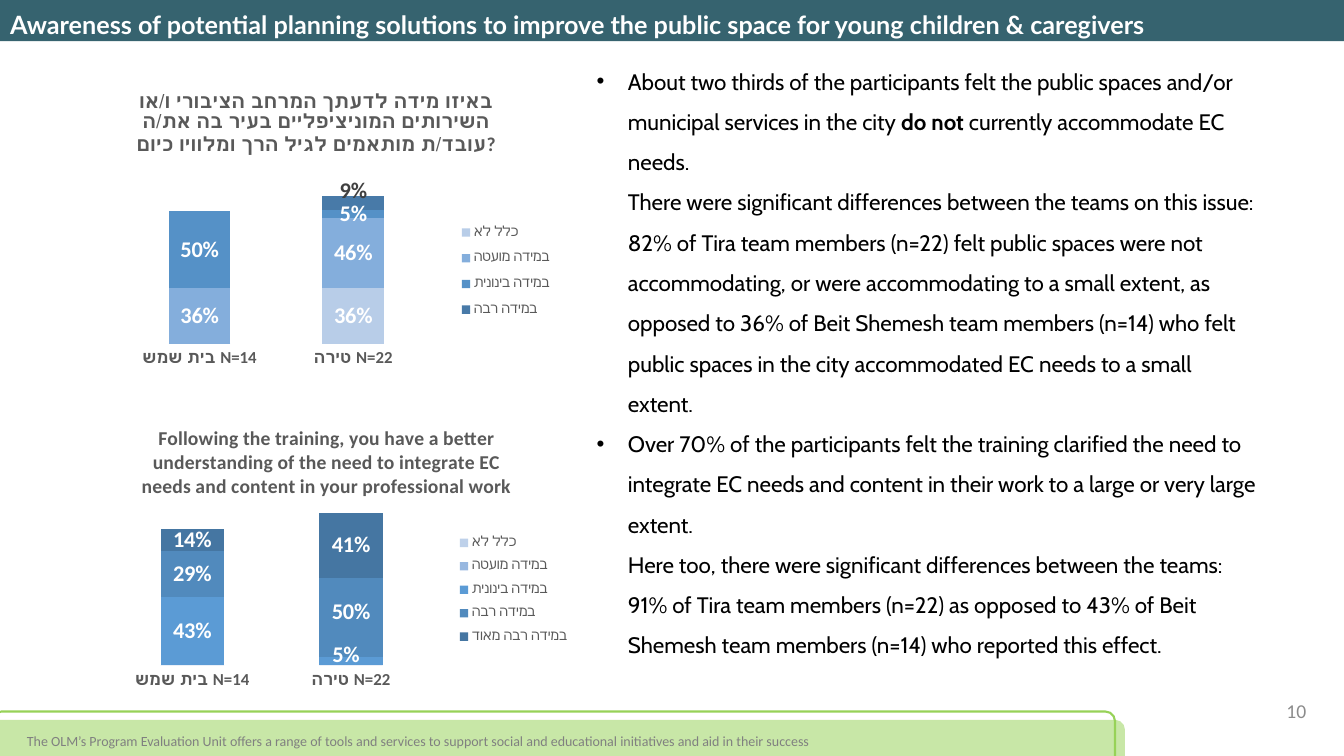
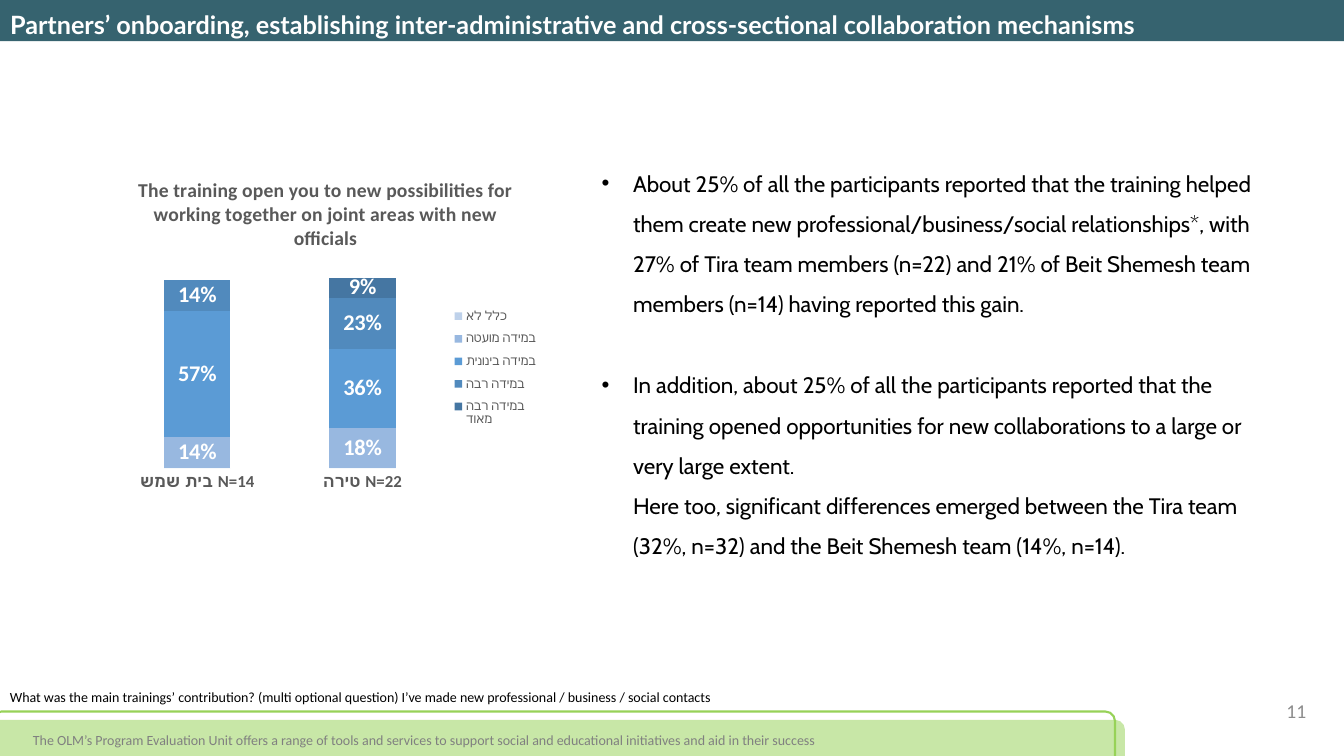
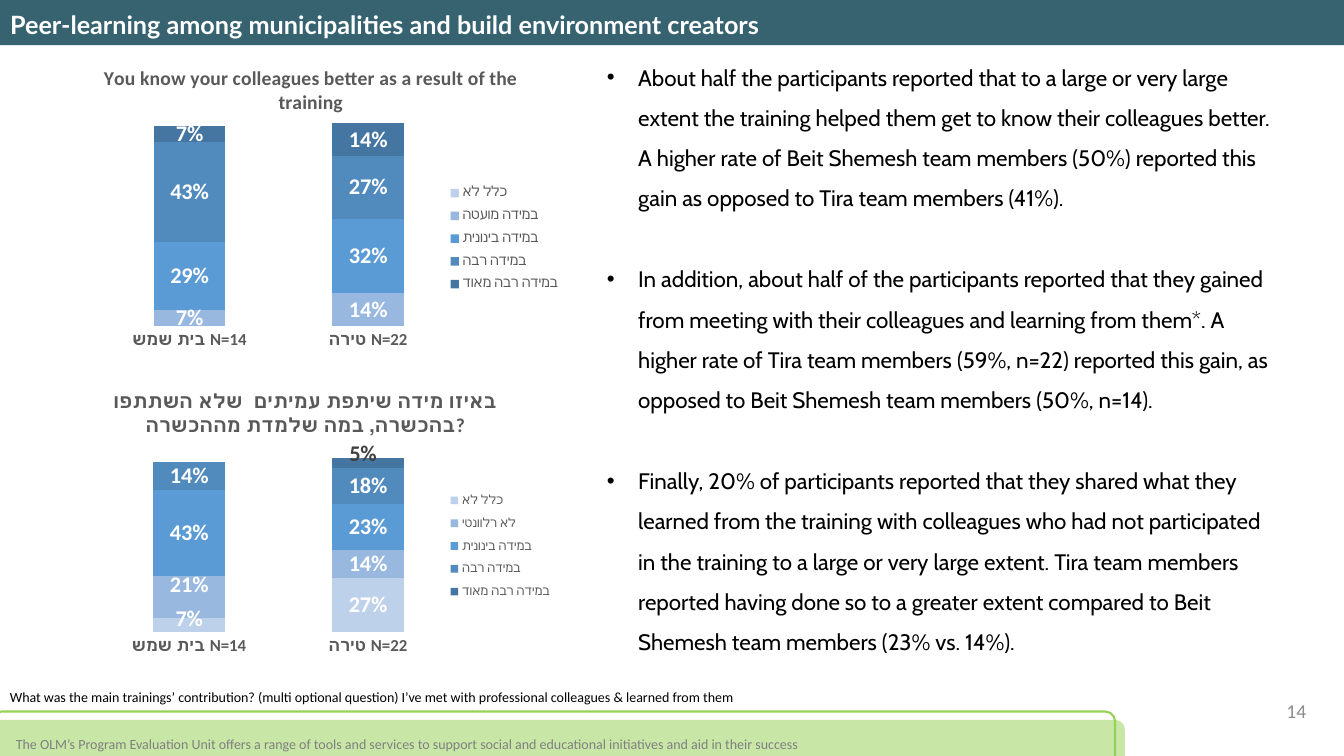
from lxml.etree import SubElement
from pptx import Presentation
from pptx.chart.data import CategoryChartData
from pptx.dml.color import RGBColor
from pptx.enum.chart import XL_CHART_TYPE, XL_LEGEND_POSITION, XL_TICK_MARK
from pptx.enum.shapes import MSO_SHAPE
from pptx.enum.text import MSO_ANCHOR, MSO_AUTO_SIZE, PP_ALIGN
from pptx.oxml.ns import qn
from pptx.util import Cm, Pt

WHITE = RGBColor(0xFF, 0xFF, 0xFF)
BLACK = RGBColor(0, 0, 0)
TEAL = RGBColor(0x36, 0x63, 0x6F)
PALE_GREEN = RGBColor(0xC8, 0xE7, 0xA7)
GREEN = RGBColor(0x97, 0xD2, 0x58)
NUMBER_GREY = RGBColor(0x8C, 0x8C, 0x8C)
FOOTER_GREY = RGBColor(0x80, 0x80, 0x80)
CHART_GREY = RGBColor(0x59, 0x59, 0x59)
DARK_LABEL = RGBColor(0x40, 0x40, 0x40)
FIVE_BLUES = [RGBColor.from_string(code) for code in ("BED1EA", "98B8E0", "5B9BD5", "518ABD", "4576A2")]
FOUR_BLUES = [RGBColor.from_string(code) for code in ("B8CDE8", "84AEDC", "5591C7", "487AA8")]

SLIDE_WIDTH, SLIDE_HEIGHT = 33.87, 19.05
BODY_INDENT = Cm(0.79)
BLANK_LINE = 29
FOOTER = (
    "The OLM’s Program Evaluation Unit offers a range of tools and services to support "
    "social and educational initiatives and aid in their success"
)
FOOTNOTE = "What was the main trainings’ contribution? (multi optional question) "
CATEGORIES = ["טירה N=22", "בית שמש N=14"]
NOT_AT_ALL, SMALL, MEDIUM, LARGE, VERY_LARGE = (
    "כלל לא", "במידה מועטה", "במידה בינונית", "במידה רבה", "במידה רבה מאוד")

# Boxes are left, top, width, height in cm. Title, plot and legend places are
# fractions of the chart; "moved" maps (series, point) to a label offset.
SLIDES = [
    {
        "number": "10",
        "title": "Awareness of potential planning solutions to improve the public space for young children & caregivers",
        "title_height": 1.04,
        "footer_at": (0.43, 18.34),
        "body_box": (14.78, 1.24, 17.25, 17.7),
        "paragraph_gap": 0,
        "body": [
            "About two thirds of the participants felt the public spaces and/or municipal services in the city "
            "**do not** currently accommodate EC needs.\n"
            "There were significant differences between the teams on this issue: \n"
            "82% of Tira team members (n=22) felt public spaces were not accommodating, or were accommodating "
            "to a small extent, as opposed to 36% of Beit Shemesh team members (n=14) who felt public spaces "
            "in the city accommodated EC needs to a small extent.",
            "Over 70% of the participants felt the training clarified the need to integrate EC needs and content "
            "in their work to a large or very large extent.\n"
            "Here too, there were significant differences between the teams: 91% of Tira team members (n=22) "
            "as opposed to 43% of Beit Shemesh team members (n=14) who reported this effect.",
        ],
        "charts": [
            {
                "box": (1.83, 10.29, 12.7, 7.62),
                "title": "Following the training, you have a better understanding of the need to integrate "
                         "EC needs and content in your professional work",
                "title_at": (0.13, 0.04),
                "plot": (0.08, 0.22, 0.63, 0.63), "legend": (0.76, 0.39, 0.23, 0.42), "legend_size": 10,
                "maximum": 1.2, "colors": FIVE_BLUES,
                "series": [(NOT_AT_ALL, (0, 0)), (SMALL, (0, 0)), (MEDIUM, (0.05, 0.43)),
                           (LARGE, (0.5, 0.29)), (VERY_LARGE, (0.41, 0.14))],
                "moved": {(2, 0): (-0.01, -0.02), (3, 0): (0, -0.02)},
            },
            {
                "box": (1.57, 1.88, 12.7, 7.62),
                "title": "באיזו מידה לדעתך המרחב הציבורי ו/או השירותים המוניציפליים בעיר בה את/ה "
                         "עובד/ת מותאמים לגיל הרך ומלוויו כיום?",
                "title_at": (0.14, 0.04),
                "plot": (0.12, 0.28, 0.61, 0.61), "legend": (0.78, 0.46, 0.2, 0.38), "legend_size": 10,
                "maximum": 1.2, "colors": FOUR_BLUES, "last_label": DARK_LABEL,
                "series": [(NOT_AT_ALL, (0.36, 0)), (SMALL, (0.46, 0.36)),
                           (MEDIUM, (0.05, 0.5)), (LARGE, (0.09, 0))],
                "moved": {(3, 0): (0, -0.04)},
            },
        ],
    },
    {
        "number": "11",
        "title": "Partners’ onboarding, establishing inter-administrative and cross-sectional collaboration mechanisms",
        "title_height": 1.04,
        "footer_at": (0.58, 18.31),
        "body_box": (14.91, 3.81, 17.07, 12.57),
        "paragraph_gap": BLANK_LINE,
        "body": [
            "About 25% of all the participants reported that the training helped them create new "
            "professional/business/social relationships*, with 27% of Tira team members (n=22) and 21% of "
            "Beit Shemesh team members (n=14) having reported this gain.",
            "In addition, about 25% of all the participants reported that the training opened opportunities "
            "for new collaborations to a large or very large extent.\n"
            "Here too, significant differences emerged between the Tira team (32%, n=32) and the "
            "Beit Shemesh team (14%, n=14).",
        ],
        "charts": [
            {
                "box": (1.88, 3.63, 12.62, 10.34),
                "title": "The training open you to new possibilities for working together on joint areas "
                         "with new officials",
                "title_at": (0.12, 0.07),
                "plot": (0.08, 0.25, 0.66, 0.54), "legend": (0.75, 0.38, 0.18, 0.33), "legend_size": 9,
                "maximum": 1, "colors": FIVE_BLUES,
                "series": [(NOT_AT_ALL, (0, 0)), (SMALL, (0.18, 0.14)), (MEDIUM, (0.36, 0.57)),
                           (LARGE, (0.23, 0.14)), (VERY_LARGE, (0.09, 0))],
            },
        ],
        "footnote": FOOTNOTE + "I’ve made new professional / business / social contacts",
    },
    {
        "number": "14",
        "title": "Peer-learning among municipalities and build environment creators",
        "title_height": 1.14,
        "footer_at": (0.15, 18.42),
        "body_box": (15.04, 1.14, 17.25, 16.66),
        "paragraph_gap": BLANK_LINE,
        "body": [
            "About half the participants reported that to a large or very large extent the training helped them "
            "get to know their colleagues better. A higher rate of Beit Shemesh team members (50%) reported "
            "this gain as opposed to Tira team members (41%).",
            "In addition, about half of the participants reported that they gained from meeting with their "
            "colleagues and learning from them*. A higher rate of Tira team members (59%, n=22) reported this "
            "gain, as opposed to Beit Shemesh team members (50%, n=14).",
            "Finally, 20% of participants reported that they shared what they learned from the training with "
            "colleagues who had not participated in the training to a large or very large extent. Tira team "
            "members reported having done so to a greater extent compared to Beit Shemesh team members "
            "(23% vs. 14%).",
        ],
        "charts": [
            {
                "box": (0.46, 1.37, 14.76, 8.15),
                "title": "You know your colleagues better as a result of the training",
                "title_at": (0.14, 0.02),
                "plot": (0.14, 0.12, 0.61, 0.72), "legend": (0.73, 0.38, 0.2, 0.38), "legend_size": 10,
                "maximum": 1, "colors": FIVE_BLUES,
                "series": [(NOT_AT_ALL, (0, 0)), (SMALL, (0.14, 0.07)), (MEDIUM, (0.32, 0.29)),
                           (LARGE, (0.27, 0.43)), (VERY_LARGE, (0.14, 0.07))],
            },
            {
                "box": (1.37, 9.53, 12.7, 7.62),
                "title": "באיזו מידה שיתפת עמיתים  שלא השתתפו בהכשרה, במה שלמדת מההכשרה?",
                "title_at": (0.11, 0.03),
                "plot": (0.09, 0.18, 0.71, 0.66), "legend": (0.78, 0.35, 0.21, 0.41), "legend_size": 9,
                "maximum": 1, "colors": FIVE_BLUES, "last_label": DARK_LABEL,
                "series": [(NOT_AT_ALL, (0.27, 0.07)), ("לא רלוונטי", (0.14, 0.21)), (MEDIUM, (0.23, 0.43)),
                           (LARGE, (0.18, 0.14)), (VERY_LARGE, (0.05, 0))],
                "moved": {(4, 0): (-0.01, -0.03), (1, 1): (0, -0.04), (0, 1): (0, -0.02)},
            },
        ],
        "footnote": FOOTNOTE + "I’ve met with professional colleagues & learned from them",
    },
]


def cm_box(box):
    return [Cm(value) for value in box]


def move(shape, box):
    shape.left, shape.top, shape.width, shape.height = cm_box(box)


def style_font(font, size, color, bold=False, name="Calibri"):
    font.name, font.size, font.bold = name, Pt(size), bold
    font.color.rgb = color


def set_body_style(presentation):
    """Give the master's first list level its size and hanging indent."""
    level = presentation.slide_master._element.find(".//" + qn("p:bodyStyle")).find(qn("a:lvl1pPr"))
    level.set("marL", str(BODY_INDENT))
    level.set("indent", str(-BODY_INDENT))
    level.find(qn("a:defRPr")).set("sz", "1600")


def add_text(shapes, box, text, size, color, align=PP_ALIGN.LEFT, anchor=MSO_ANCHOR.TOP):
    frame = shapes.add_textbox(*cm_box(box)).text_frame
    frame.word_wrap = True
    frame.vertical_anchor = anchor
    frame.text = text
    paragraph = frame.paragraphs[0]
    paragraph.alignment = align
    style_font(paragraph.runs[0].font, size, color)


def fill_title(title, text, height):
    move(title, (0, 0, SLIDE_WIDTH, height))
    title.fill.solid()
    title.fill.fore_color.rgb = TEAL
    frame = title.text_frame
    frame.text = text
    frame.auto_size = MSO_AUTO_SIZE.NONE
    frame.vertical_anchor = MSO_ANCHOR.TOP
    paragraph = frame.paragraphs[0]
    paragraph.alignment = PP_ALIGN.LEFT
    paragraph.line_spacing = 1.15
    style_font(paragraph.runs[0].font, 18, WHITE, bold=True, name="Lato")


def fill_body(body, box, texts, gap):
    """Write the list; ** encloses bold words and a newline breaks the line."""
    move(body, box)
    frame = body.text_frame
    frame.auto_size = MSO_AUTO_SIZE.NONE
    for index, text in enumerate(texts):
        paragraph = frame.add_paragraph() if index else frame.paragraphs[0]
        paragraph.line_spacing = 1.5
        paragraph.space_before = Pt(gap if index else 0)
        for line_index, line in enumerate(text.split("\n")):
            if line_index:
                paragraph.add_line_break()
            for part_index, part in enumerate(line.split("**")):
                run = paragraph.add_run()
                run.text = part
                style_font(run.font, 16, BLACK, bold=part_index % 2 == 1, name="Cabin")


def add_footer(slide, text_at):
    shapes = slide.shapes.add_group_shape().shapes
    band = shapes.add_shape(MSO_SHAPE.ROUNDED_RECTANGLE, *cm_box((-0.33, 18.14, 28.68, 1.45)))
    band.fill.solid()
    band.fill.fore_color.rgb = PALE_GREEN
    band.line.fill.background()
    outline = shapes.add_shape(MSO_SHAPE.ROUNDED_RECTANGLE, *cm_box((-0.2, 17.93, 28.3, 1.45)))
    outline.fill.background()
    outline.line.color.rgb = GREEN
    outline.line.width = Pt(1.5)
    for shape in (band, outline):
        shape.shadow.inherit = False
    add_text(shapes, (*text_at, 28.68, 0.69), FOOTER, 10, FOOTER_GREY)


def set_layout(parent, index, values, from_edge=True, inner=False):
    """Place a chart part by fractions, as child number index of parent."""
    for old in parent.findall(qn("c:layout")):
        parent.remove(old)
    layout = parent.makeelement(qn("c:layout"))
    parent.insert(index, layout)
    manual = SubElement(layout, qn("c:manualLayout"))
    settings = [("layoutTarget", "inner")] if inner else []
    if from_edge:
        settings += [("xMode", "edge"), ("yMode", "edge")]
    settings += zip("xywh", values)
    for tag, value in settings:
        SubElement(manual, qn("c:" + tag)).set("val", str(value))


def add_stacked_chart(slide, content):
    data = CategoryChartData(number_format="0%")
    data.categories = CATEGORIES
    for name, values in content["series"]:
        data.add_series(name, values)
    chart = slide.shapes.add_chart(XL_CHART_TYPE.COLUMN_STACKED, *cm_box(content["box"]), data).chart
    style_font(chart.font, 10, BLACK)

    chart.has_title = True
    title_frame = chart.chart_title.text_frame
    title_frame.text = content["title"]
    style_font(title_frame.paragraphs[0].runs[0].font, 14, CHART_GREY, bold=True)
    set_layout(chart.chart_title._element, 1, content["title_at"])

    chart.has_legend = True
    chart.legend.position = XL_LEGEND_POSITION.BOTTOM
    chart.legend.include_in_layout = False
    style_font(chart.legend.font, content["legend_size"], CHART_GREY)
    set_layout(chart.legend._element, 1, content["legend"])

    category_axis, value_axis = chart.category_axis, chart.value_axis
    category_axis.reverse_order = True
    category_axis.major_tick_mark = XL_TICK_MARK.NONE
    category_axis.format.line.fill.background()
    style_font(category_axis.tick_labels.font, 12, CHART_GREY, bold=True)
    value_axis.minimum_scale, value_axis.maximum_scale = 0, content["maximum"]
    value_axis.has_major_gridlines = False
    value_axis.visible = False

    plot = chart.plots[0]
    plot.gap_width, plot.overlap = 150, 100
    plot.vary_by_categories = False
    set_layout(plot._element.getparent(), 0, content["plot"], inner=True)

    all_series = list(plot.series)
    label_colors = [WHITE] * (len(all_series) - 1) + [content.get("last_label", WHITE)]
    for series, color, label_color in zip(all_series, content["colors"], label_colors):
        series.format.fill.solid()
        series.format.fill.fore_color.rgb = color
        if any(series.values):
            labels = series.data_labels
            labels.show_value = True
            labels.number_format = "0%;;"
            labels.number_format_is_linked = False
            style_font(labels.font, 16, label_color, bold=True)
    for (series_index, point_index), offset in content.get("moved", {}).items():
        series = all_series[series_index]
        style_font(series.points[point_index].data_label.font, 16, label_colors[series_index], bold=True)
        for label in series._element.iter(qn("c:dLbl")):
            if label.find(qn("c:idx")).get("val") == str(point_index):
                set_layout(label, 1, offset, from_edge=False)


def build_slide(presentation, content):
    slide = presentation.slides.add_slide(presentation.slide_layouts[1])
    fill_title(slide.shapes.title, content["title"], content["title_height"])
    fill_body(slide.placeholders[1], content["body_box"], content["body"], content["paragraph_gap"])
    add_text(slide.shapes, (31.39, 17.4, 1.78, 1.02), content["number"], 14, NUMBER_GREY,
             PP_ALIGN.RIGHT, MSO_ANCHOR.MIDDLE)
    add_footer(slide, content["footer_at"])
    for chart_content in content["charts"]:
        add_stacked_chart(slide, chart_content)
    if "footnote" in content:
        add_text(slide.shapes, (0, 17.22, 21.46, 0.69), content["footnote"], 10, BLACK)


def main():
    presentation = Presentation()
    presentation.slide_width, presentation.slide_height = Cm(SLIDE_WIDTH), Cm(SLIDE_HEIGHT)
    set_body_style(presentation)
    for content in SLIDES:
        build_slide(presentation, content)
    presentation.save("out.pptx")


if __name__ == "__main__":
    main()
